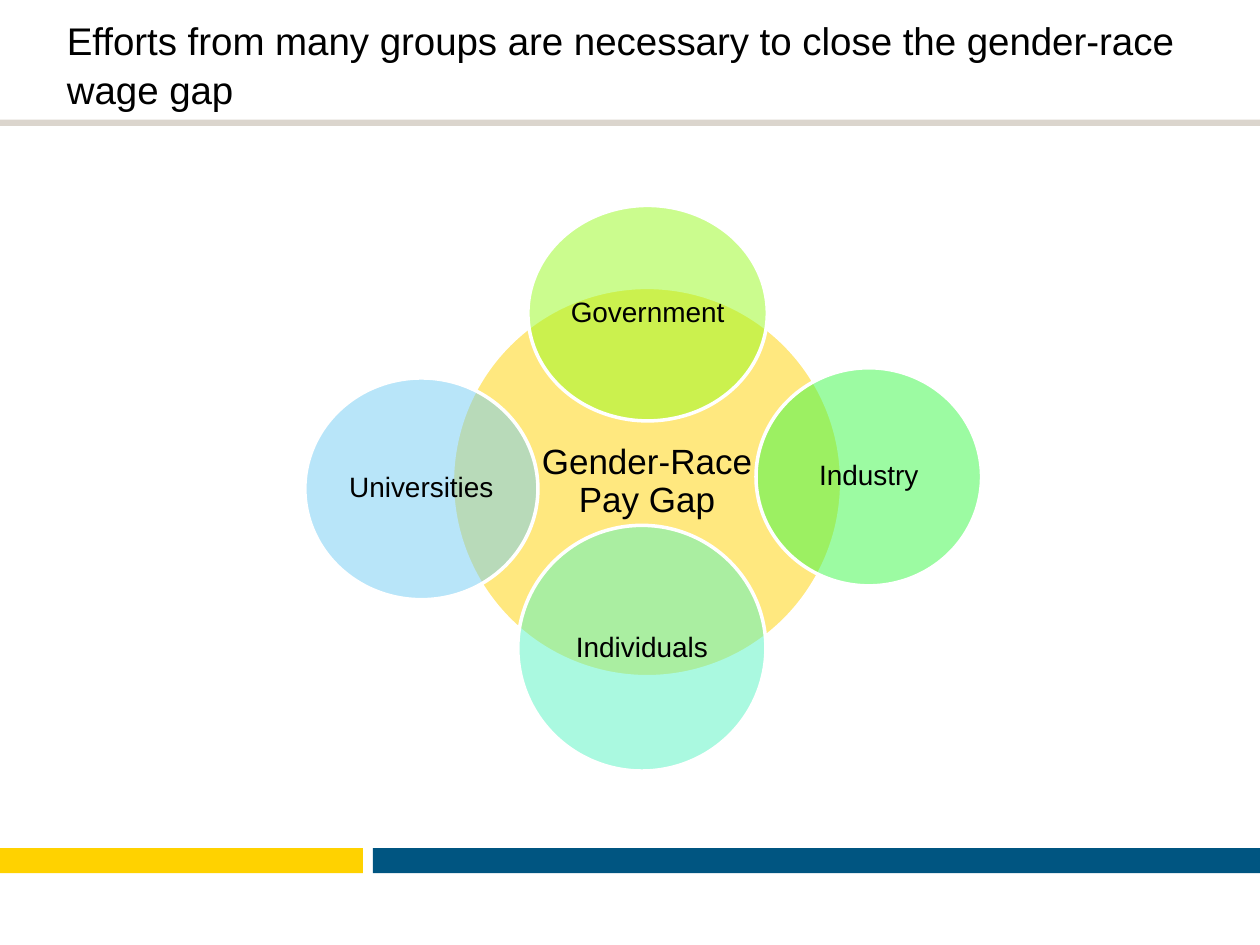
"""Build a slide showing the groups whose efforts can close the gender-race wage gap."""
from typing import NamedTuple

from lxml.etree import SubElement
from pptx import Presentation
from pptx.dml.color import RGBColor as RGB
from pptx.enum.shapes import MSO_SHAPE as SHAPE
from pptx.enum.text import MSO_ANCHOR as ANCHOR, MSO_AUTO_SIZE as AUTO, PP_ALIGN as ALIGN
from pptx.oxml.ns import qn
from pptx.util import Pt

COLORS = {
    "black": "000000", "white": "FFFFFF", "grey": "DBD5CD", "navy": "005581",
    "yellow": "FFD200", "lime": "99FB1E", "green": "3BF847", "mint": "57F5C3",
    "sky": "72CDF4",
}


class Bar(NamedTuple):
    left: float
    top: float
    width: float
    height: float
    color: str


class Circle(NamedTuple):
    label: str
    left: float
    top: float
    width: float
    height: float
    color: str
    size: int = 16
    inset: float = 1.5


BARS = [
    Bar(213.1, 484.6, 506.9, 14.4, "navy"),
    Bar(0, 484.6, 207.4, 14.4, "yellow"),
    Bar(0, 68.4, 720, 3.6, "grey"),
]
CIRCLES = [
    Circle("Gender-Race Pay Gap", 258.5, 164.2, 222.5, 222.5, "yellow", 20, 2),
    Circle("Government", 301.7, 117.4, 136.8, 123.1, "lime"),
    Circle("Industry", 432, 210.2, 128.9, 124.6, "green"),
    Circle("Individuals", 295.9, 300.2, 141.8, 140.4, "mint"),
    Circle("Universities", 174.2, 216, 133.2, 126.7, "sky"),
]


def rgb(name: str) -> RGB:
    return RGB.from_string(COLORS[name])


def add_filled(s, kind: SHAPE, item: Bar | Circle):
    sp = s.shapes.add_shape(kind, Pt(item.left), Pt(item.top), Pt(item.width), Pt(item.height))
    sp.shadow.inherit = False
    sp.fill.solid()
    sp.fill.fore_color.rgb = rgb(item.color)
    return sp


def add_run(p, text: str, size: int) -> None:
    r = p.add_run()
    r.text = text
    r.font.name = "Arial"
    r.font.size = Pt(size)
    r.font.color.rgb = rgb("black")


def set_insets(tf, x: float, y: float) -> None:
    tf.margin_left = tf.margin_right = Pt(x)
    tf.margin_top = tf.margin_bottom = Pt(y)


def add_bar(s, bar: Bar) -> None:
    add_filled(s, SHAPE.RECTANGLE, bar).line.fill.background()


def add_circle(s, circle: Circle) -> None:
    sp = add_filled(s, SHAPE.OVAL, circle)
    color = sp.fill._xPr.find(qn("a:solidFill")).find(qn("a:srgbClr"))
    SubElement(color, qn("a:alpha"), val="50000")
    sp.line.color.rgb = rgb("white")
    sp.line.width = Pt(2)
    tf = sp.text_frame
    tf.word_wrap = True
    tf.vertical_anchor = ANCHOR.MIDDLE
    set_insets(tf, circle.inset, circle.inset)
    p = tf.paragraphs[0]
    p.alignment = ALIGN.CENTER
    p.line_spacing = 0.9
    add_run(p, circle.label, circle.size)


def set_title(s, text: str) -> None:
    sp = s.shapes.title
    sp.left, sp.top, sp.width, sp.height = Pt(31.7), Pt(5), Pt(665.3), Pt(42.5)
    tf = sp.text_frame
    tf.word_wrap = True
    tf.auto_size = AUTO.NONE
    tf.vertical_anchor = ANCHOR.TOP
    set_insets(tf, 6.5, 3)
    p = tf.paragraphs[0]
    p.alignment = ALIGN.LEFT
    p.line_spacing = 1.06
    add_run(p, text, 22)


def main() -> None:
    prs = Presentation()
    prs.slide_width, prs.slide_height = Pt(720), Pt(540)
    s = prs.slides.add_slide(prs.slide_layouts[5])
    for bar in BARS:
        add_bar(s, bar)
    set_title(s, "Efforts from many groups are necessary to close the gender-race wage gap")
    for circle in CIRCLES:
        add_circle(s, circle)
    prs.save("out.pptx")


if __name__ == "__main__":
    main()
